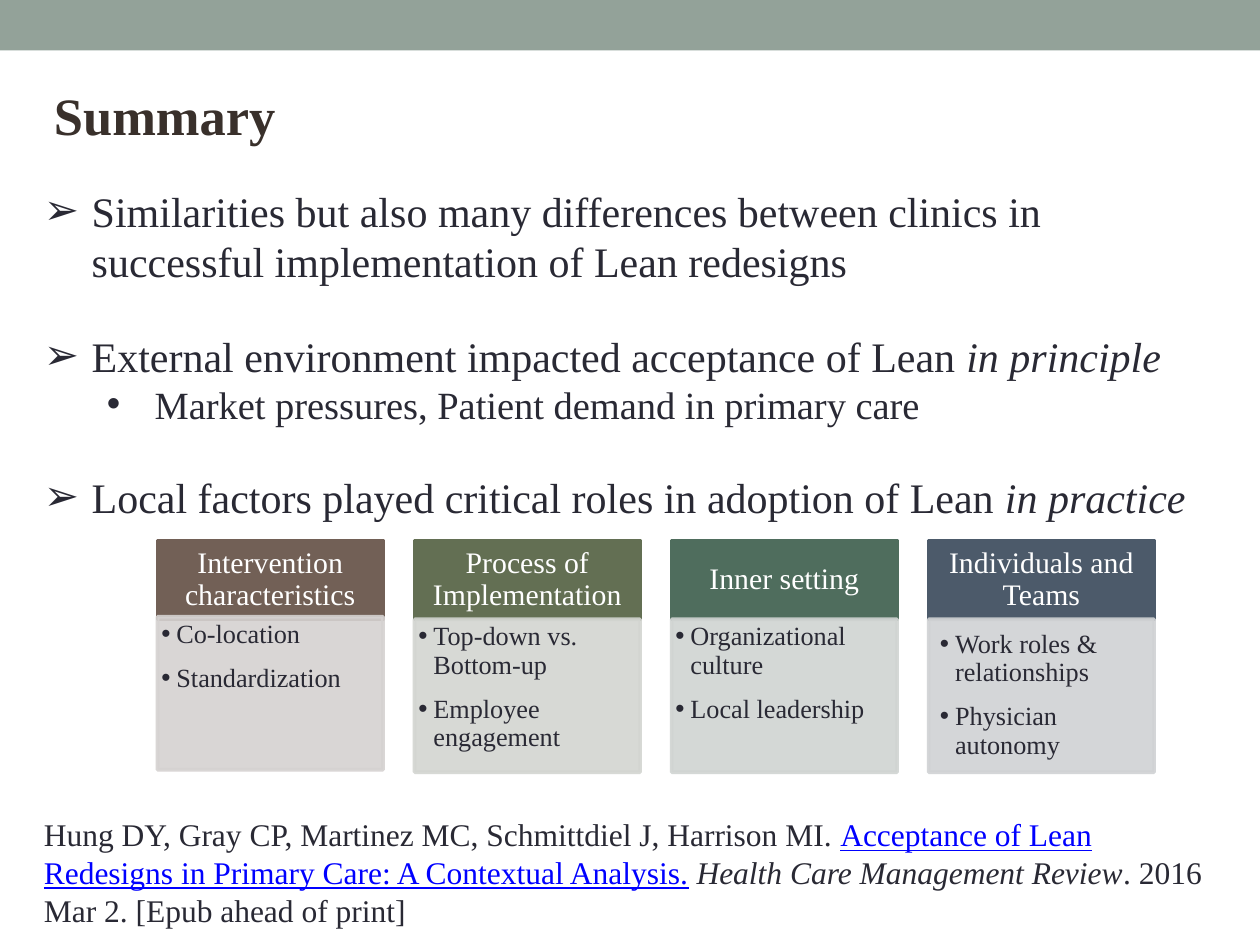
from lxml.etree import SubElement
from pptx import Presentation
from pptx.dml.color import RGBColor
from pptx.enum.shapes import MSO_SHAPE
from pptx.enum.text import MSO_ANCHOR, PP_ALIGN
from pptx.oxml.ns import qn
from pptx.util import Inches, Pt

WIDE, HIGH = 10, 7.5
INK, BLUE, WHITE = "292934", "0000FF", "FFFFFF"
FONT = "Times New Roman"
CARDS = [
    ("Intervention characteristics", "726056", "D5D2D1",
     ["Co-location", "Standardization"]),
    ("Process of Implementation", "636F53", "D3D5D1",
     ["Top-down vs. Bottom-up", "Employee engagement"]),
    ("Inner setting", "4F6D5D", "D0D4D2",
     ["Organizational culture", "Local leadership"]),
    ("Individuals and Teams", "4C5A6A", "D0D2D4",
     ["Work roles & relationships", "Physician autonomy"]),
]


def tint(code):
    """Turn a hex string into a colour."""
    return RGBColor.from_string(code)


def area(box):
    """Turn percent shares of the slide into lengths."""
    x, y, w, h = box
    return [Inches(n * side / 100)
            for n, side in ((x, WIDE), (y, HIGH), (w, WIDE), (h, HIGH))]


def block(slide, box, fill, line=None, alpha=None):
    """Draw a flat rectangle, see-through if alpha is given."""
    shape = slide.shapes.add_shape(MSO_SHAPE.RECTANGLE, *area(box))
    shape.shadow.inherit = False
    shape.fill.solid()
    shape.fill.fore_color.rgb = tint(fill)
    if line:
        shape.line.color.rgb = tint(line)
        shape.line.width = Pt(2.08)
    else:
        shape.line.fill.background()
    if alpha:
        for node in list(shape.element.spPr.iter(qn("a:srgbClr"))):
            SubElement(node, qn("a:alpha"), val=str(alpha * 1000))
    return shape


def frame(shape, pads=(0.1, 0.05, 0.1, 0.05), anchor=MSO_ANCHOR.TOP):
    """Set wrap, insets and anchor of a shape's text."""
    text = shape.text_frame
    text.word_wrap = True
    text.vertical_anchor = anchor
    (text.margin_left, text.margin_top,
     text.margin_right, text.margin_bottom) = map(Inches, pads)
    return text


def write(text, runs, size, color=INK, bold=False, align=PP_ALIGN.LEFT,
          gap=0, pitch=1.0, mark=None, left=0, hang=0, level=0):
    """Add a paragraph of runs, each a string or a (string, style) pair."""
    fresh = not text.paragraphs[0].runs
    para = text.paragraphs[0] if fresh else text.add_paragraph()
    para.alignment, para.level, para.line_spacing = align, level, pitch
    para.space_before, para.space_after = Pt(0 if fresh else gap), Pt(0)
    props = para._p.get_or_add_pPr()
    props.set("marL", str(Inches(left)))
    props.set("indent", str(-Inches(hang)))
    if mark:
        SubElement(props, qn("a:buFont"), typeface="Arial")
        SubElement(props, qn("a:buChar"), char=mark)
    else:
        SubElement(props, qn("a:buNone"))
    for part in [runs] if isinstance(runs, str) else runs:
        words, style = (part, "") if isinstance(part, str) else part
        run = para.add_run()
        run.text = words
        font = run.font
        font.name, font.size, font.bold = FONT, Pt(size), bold
        font.italic = style == "italic"
        font.underline = style == "link"
        font.color.rgb = tint(BLUE if style == "link" else color)


def head(slide, box):
    """Place the slide title."""
    text = frame(slide.shapes.add_textbox(*area(box)))
    write(text, "Summary", 30, color="39302B", bold=True, pitch=0.9)


def body(slide, box):
    """Place the main points and the citation below them."""
    text = frame(slide.shapes.add_textbox(*area(box)))
    point = dict(size=24, mark="➢", left=0.38, hang=0.38, gap=25.3)
    write(text, "Similarities but also many differences between clinics in "
          "successful implementation of Lean redesigns", **point)
    write(text, ["External environment impacted acceptance of Lean ",
                 ("in principle", "italic")], **point)
    write(text, "Market pressures, Patient demand in primary care", 22,
          mark="•", left=0.88, hang=0.38, level=1)
    write(text, ["Local factors played critical roles in adoption of Lean ",
                 ("in practice", "italic")], **point)
    write(text, [
        "Hung DY, Gray CP, Martinez MC, Schmittdiel J, Harrison MI. ",
        ("Acceptance of Lean Redesigns in Primary Care: "
         "A Contextual Analysis.", "link"),
        " ", ("Health Care Management Review", "italic"),
        ". 2016 Mar 2. [Epub ahead of print]"], 18, gap=168)


def card(slide, box, data, lift, pads):
    """Place one factor: a dark header over a pale list."""
    x, y, w, h = box
    name, dark, pale, items = data
    top = h * 0.34
    text = frame(block(slide, (x, y, w, top), dark, line=dark),
                 (0.13, 0.08, 0.13, 0.08), MSO_ANCHOR.MIDDLE)
    write(text, name, 17, color=WHITE, align=PP_ALIGN.CENTER, pitch=0.9)
    low = (x, y + top - lift, w, h - top)
    text = frame(block(slide, low, pale, line=pale, alpha=90), pads)
    for item in items:
        write(text, item, 15, mark="•", left=0.12, hang=0.12, level=1,
              pitch=0.9, gap=9)


def cards(slide, box):
    """Spread the factor cards evenly over the box."""
    x, y, w, h = box
    wide = 17.9
    step = (w - wide) / (len(CARDS) - 1)
    for i, data in enumerate(CARDS):
        last = i == len(CARDS) - 1
        pads = (0.09, 0.09, 0.12, 0.13) if last else (0.03, 0.03, 0.04, 0.04)
        card(slide, (x + i * step, y, wide, h), data,
             0 if i else 0.27, pads)


def main():
    """Build and save the slide."""
    deck = Presentation()
    deck.slide_width, deck.slide_height = Inches(WIDE), Inches(HIGH)
    slide = deck.slides.add_slide(deck.slide_layouts[6])
    block(slide, (0, 0, 100, 5.33), "93A299")
    head(slide, (3.3, 8.93, 96.7, 10))
    body(slide, (2.5, 18.93, 95, 81))
    cards(slide, (12.5, 57.2, 79.1, 24.53))
    deck.save("out.pptx")


if __name__ == "__main__":
    main()
